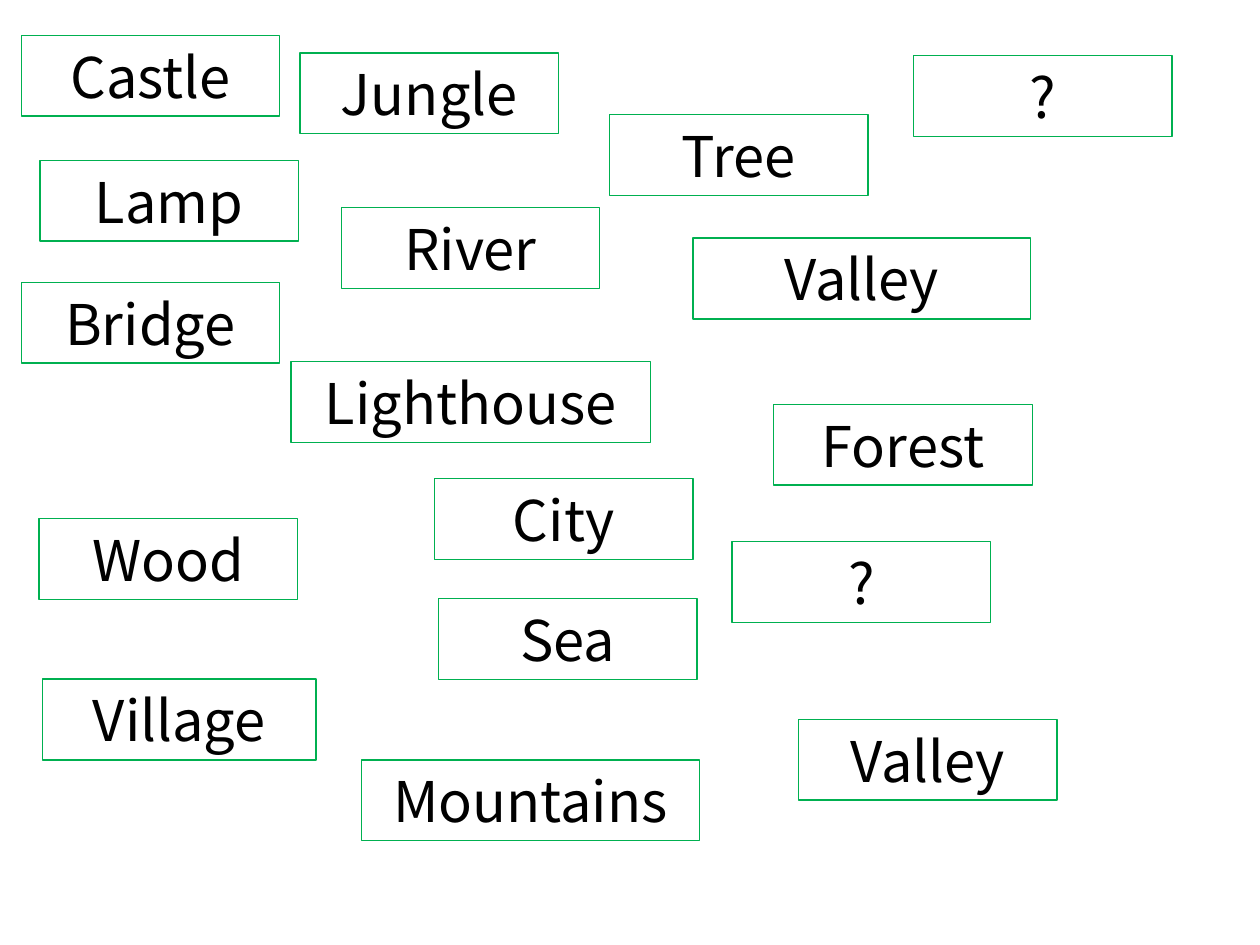
from pptx import Presentation
from pptx.dml.color import RGBColor as RGB
from pptx.enum.text import MSO_ANCHOR as Anchor, PP_ALIGN as Align
from pptx.util import Cm, Pt

COLORS = {"border": "00B050", "text": "000000"}
CARD_WIDTH, CARD_HEIGHT = 5.21, 1.63

# Word, left, top and, where it differs from the usual one, width (cm)
WORDS = [
    ("Castle", 0.43, 0.71),
    ("Lamp", 0.81, 3.23),
    ("Bridge", 0.43, 5.69),
    ("Jungle", 6.05, 1.07),
    ("River", 6.88, 4.19),
    ("Lighthouse", 5.87, 7.29, 7.24),
    ("Wood", 0.79, 10.46),
    ("Tree", 12.29, 2.31),
    ("Valley", 13.97, 4.8, 6.81),
    ("City", 8.76, 9.65),
    ("Forest", 15.6, 8.15),
    ("Village", 0.86, 13.69, 5.51),
    ("Valley", 16.1, 14.5),
    ("?", 18.42, 1.12),
    ("?", 14.76, 10.92),
    ("Sea", 8.84, 12.07),
    ("Mountains", 7.29, 15.32, 6.81),
]


class WordSlide:
    """Holds the text style and the slide being filled."""

    font_name = "Noto Sans CJK KR"
    font_size = Pt(32)
    border_width = Pt(0.75)

    def __init__(self, prs):
        self.slide = prs.slides.add_slide(prs.slide_layouts[6])

    def card(self, word, left, top, width=CARD_WIDTH):
        sp = self.slide.shapes.add_textbox(
            Cm(left), Cm(top), Cm(width), Cm(CARD_HEIGHT))

        # Border
        sp.line.color.rgb = RGB.from_string(COLORS["border"])
        sp.line.width = self.border_width

        # Word
        tf = sp.text_frame
        tf.word_wrap = True
        tf.vertical_anchor = Anchor.MIDDLE
        p = tf.paragraphs[0]
        p.text = word
        p.alignment = Align.CENTER
        p.font.name = self.font_name
        p.font.size = self.font_size
        p.font.color.rgb = RGB.from_string(COLORS["text"])
        return sp


def main():
    prs = Presentation()
    prs.slide_width, prs.slide_height = Cm(25.4), Cm(19.05)

    # Scattered word cards
    s = WordSlide(prs)
    for word in WORDS:
        s.card(*word)

    prs.save("out.pptx")


if __name__ == "__main__":
    main()
